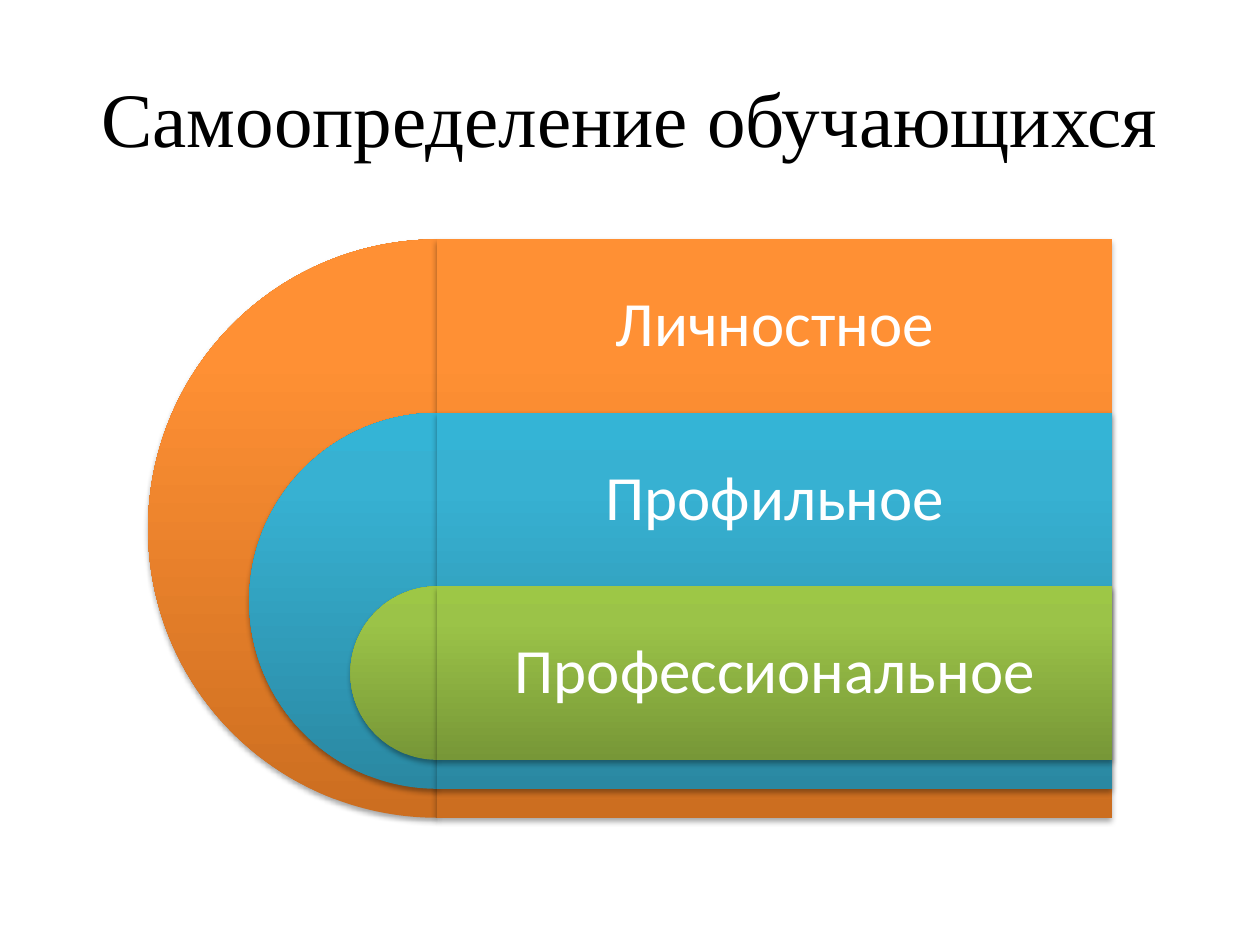
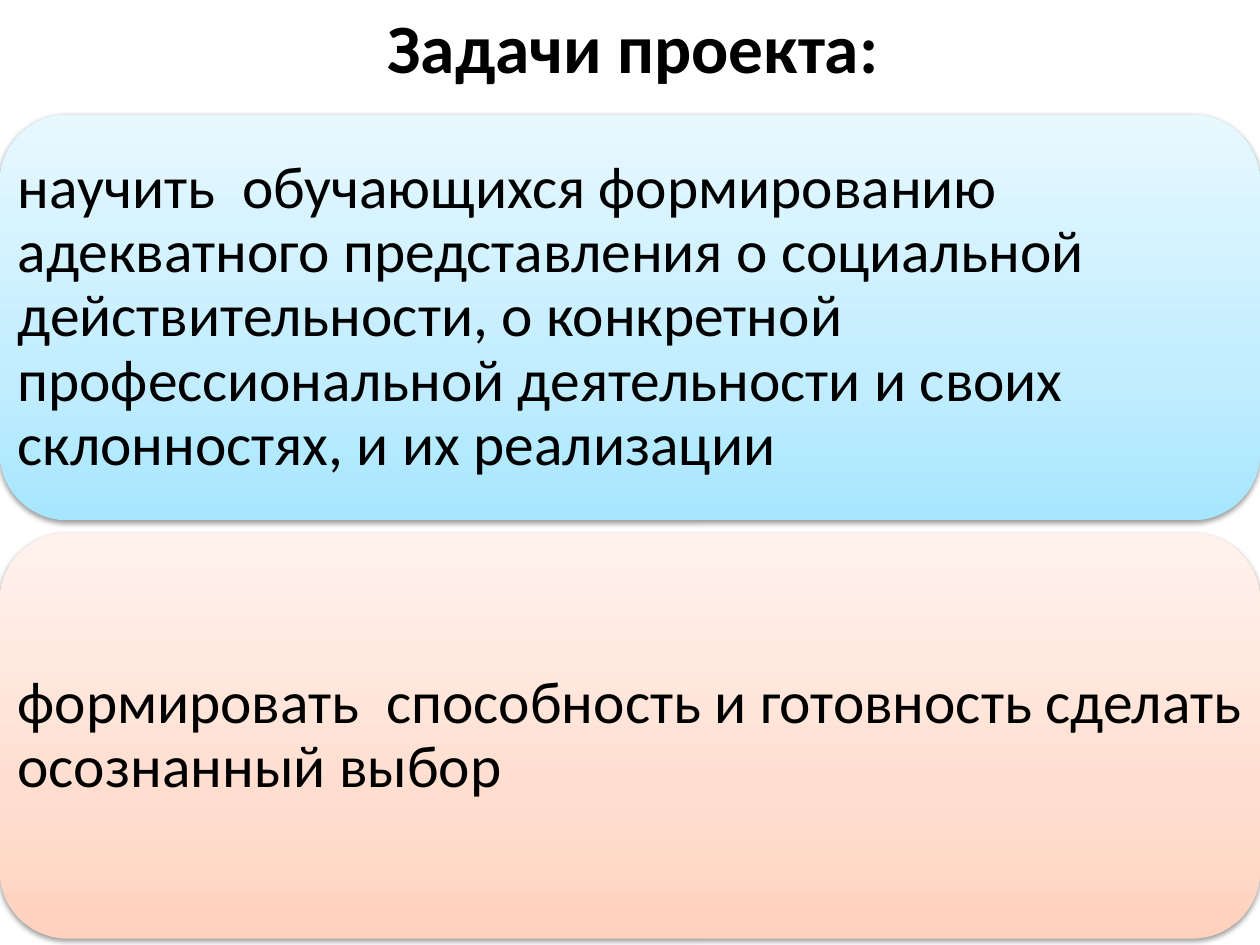
"""Builds two slides: nested levels of self-determination and the project tasks."""
import copy

import pptx
import pptx.dml.color
import pptx.enum.shapes
import pptx.enum.text
import pptx.oxml
import pptx.oxml.ns
import pptx.util

RGB = pptx.dml.color.RGBColor
KIND = pptx.enum.shapes.MSO_SHAPE
ALIGN = pptx.enum.text.PP_ALIGN
BLACK = RGB(0, 0, 0)
WHITE = RGB(255, 255, 255)
ORANGE = (0, RGB(0xCC, 0x6E, 0x20)), (0.8, RGB(0xFF, 0x90, 0x34)), (1, RGB(0xFF, 0x91, 0x36))
TEAL = (0, RGB(0x2A, 0x88, 0xA2)), (0.8, RGB(0x37, 0xB1, 0xD2)), (1, RGB(0x34, 0xB4, 0xD6))
GREEN = (0, RGB(0x77, 0x97, 0x37)), (0.8, RGB(0x9B, 0xC3, 0x48)), (1, RGB(0x9D, 0xC7, 0x46))
SKY = (0, RGB(0xA7, 0xE6, 0xFF)), (0.35, RGB(0xC1, 0xED, 0xFF)), (1, RGB(0xE7, 0xF8, 0xFF))
PEACH = (0, RGB(0xFF, 0xD2, 0xBD)), (0.35, RGB(0xFF, 0xDE, 0xD0)), (1, RGB(0xFF, 0xF2, 0xED))

WIDE, HIGH = 10, 7.5
SERIF, SANS = "Times New Roman", "Calibri"

LEVELS = [
    ("Личностное", ORANGE),
    ("Профильное", TEAL),
    ("Профессиональное", GREEN),
]
TASKS = [
    ("научить  обучающихся формированию адекватного представления о социальной "
     "действительности, о конкретной профессиональной деятельности и своих "
     "склонностях, и их реализации", SKY),
    ("формировать  способность и готовность сделать осознанный выбор", PEACH),
]


def place(box):
    """Turn inches into lengths."""
    return [pptx.util.Inches(side) for side in box]


def write(slide, box, text, size, color, font=SANS, align=ALIGN.CENTER,
          bold=False, inset=None, line=None):
    """Add one vertically centred paragraph."""
    frame = slide.shapes.add_textbox(*place(box)).text_frame
    frame.word_wrap = True
    frame.vertical_anchor = pptx.enum.text.MSO_ANCHOR.MIDDLE
    if inset is not None:
        frame.margin_left = frame.margin_right = pptx.util.Inches(inset)
        frame.margin_top = frame.margin_bottom = pptx.util.Inches(inset)
    para = frame.paragraphs[0]
    para.alignment = align
    if line:
        para.line_spacing = line
    run = para.add_run()
    run.text = text
    run.font.name = font
    run.font.size = pptx.util.Pt(size)
    run.font.bold = bold
    run.font.color.rgb = color


def panel(slide, kind, box, stops, alpha, drop):
    """Add a borderless shape with an upward gradient and a soft shadow."""
    shape = slide.shapes.add_shape(kind, *place(box))
    shape.line.fill.background()
    shape.fill.gradient()
    shape.fill.gradient_angle = 90
    props = shape._element.spPr
    ramp = props.find(".//" + pptx.oxml.ns.qn("a:gsLst"))
    ramp.append(copy.deepcopy(ramp[0]))
    for stop, (spot, color) in zip(shape.fill.gradient_stops, stops):
        stop.position = spot
        stop.color.rgb = color
    shape.shadow.inherit = False
    props.find(pptx.oxml.ns.qn("a:effectLst")).append(pptx.oxml.parse_xml(
        f'<a:outerShdw {pptx.oxml.ns.nsdecls("a")} blurRad="{pptx.util.Pt(3.1)}" '
        f'dist="{pptx.util.Pt(drop)}" dir="5400000" rotWithShape="0">'
        f'<a:srgbClr val="{BLACK}"><a:alpha val="{alpha * 1000}"/></a:srgbClr>'
        '</a:outerShdw>'))
    return shape


def levels(slide):
    """Draw half discs, each continued by a bar to the right."""
    write(slide, (0.05 * WIDE, 0.04 * HIGH, 0.9 * WIDE, 1.25),
          "Самоопределение обучающихся", 44, BLACK, SERIF)
    left, top, width, full = 3.47, 1.9, 5.36, 4.59
    band, shrink = 0.3 * full, 0.35 * full
    for row, (text, stops) in enumerate(LEVELS):
        y, size = top + row * band, full - row * shrink
        disc = panel(slide, KIND.PIE, (left - size / 2, y, size, size), stops, 35, 1.8)
        disc.adjustments[0], disc.adjustments[1] = 54, 162
        panel(slide, KIND.RECTANGLE, (left, y, width, size), stops, 35, 1.8)
        write(slide, (left, y, width, band), text, 36, WHITE, inset=0.15, line=0.9)


def tasks(slide):
    """Stack full-width rounded panels under the title."""
    write(slide, (0.55, 0, 8.95, 0.72), "Задачи проекта:", 39.6, BLACK, bold=True)
    top, tall, gap = 0.91, 3.22, 0.1
    for row, (text, stops) in enumerate(TASKS):
        box = 0, top + row * (tall + gap), WIDE, tall
        panel(slide, KIND.ROUNDED_RECTANGLE, box, stops, 38, 1.6)
        write(slide, box, text, 34, BLACK, align=ALIGN.LEFT, inset=0.14, line=0.9)


def main():
    """Build and save the deck."""
    deck = pptx.Presentation()
    deck.slide_width, deck.slide_height = place((WIDE, HIGH))
    for draw in (levels, tasks):
        draw(deck.slides.add_slide(deck.slide_layouts[6]))
    deck.save("out.pptx")


if __name__ == "__main__":
    main()
